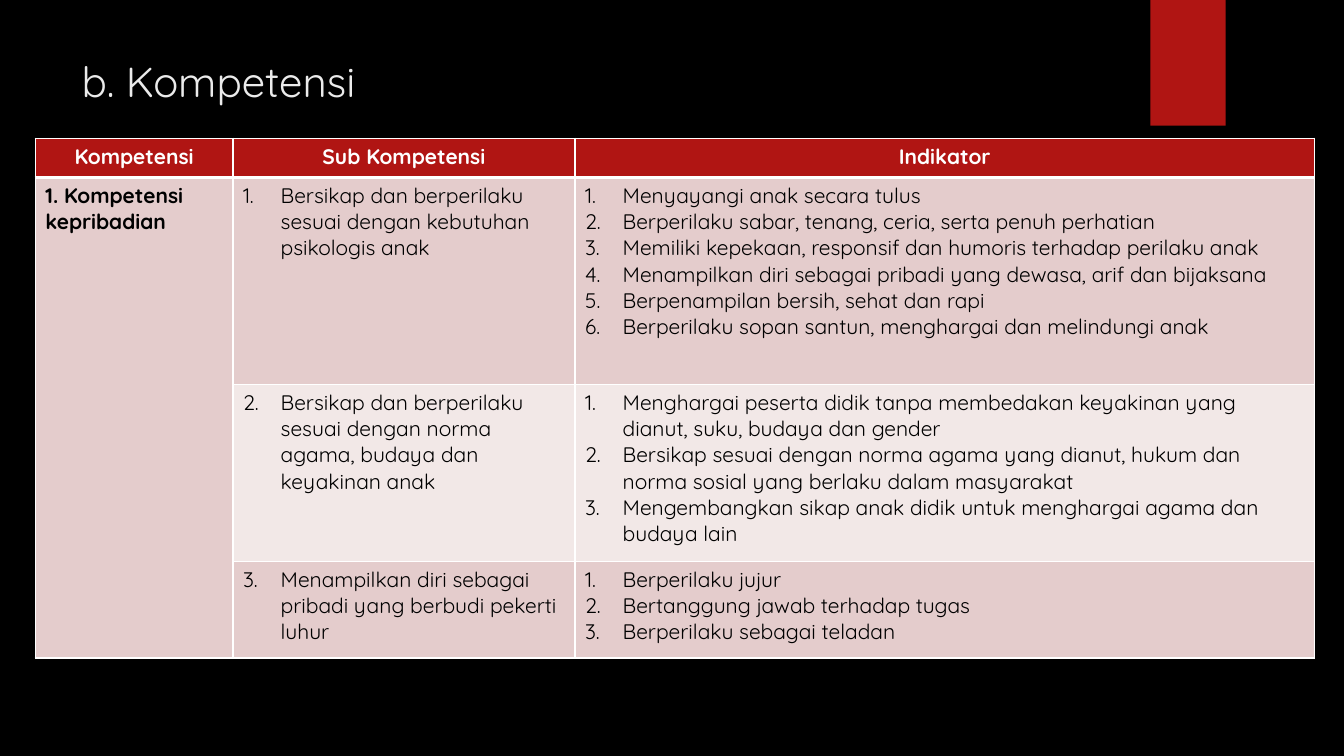
"""Build the slide that lists personality competences and their indicators."""
from dataclasses import dataclass

import lxml.etree
import pptx
import pptx.dml.color
import pptx.enum.shapes
import pptx.enum.text
import pptx.oxml.ns
import pptx.util
from pptx.util import Cm


@dataclass(frozen=True)
class Theme:
    """Colours, font and type sizes of the slide."""

    font: str = "Quicksand"
    title_size: int = 30
    table_size: int = 15
    background: str = "000000"
    title: str = "EBEBEB"
    accent: str = "B01513"
    header_text: str = "FFFFFF"
    body_text: str = "000000"
    border: str = "FFFFFF"
    band_dark: str = "E4CCCC"
    band_light: str = "F2E8E7"


THEME = Theme()
HEADERS = ["Kompetensi", "Sub Kompetensi", "Indikator"]
COMPETENCE = "1. Kompetensi kepribadian"
SUB_COMPETENCES = [
    ("Bersikap dan berperilaku sesuai dengan kebutuhan psikologis anak", [
        "Menyayangi anak secara tulus",
        "Berperilaku sabar, tenang, ceria, serta penuh perhatian",
        "Memiliki kepekaan, responsif dan humoris terhadap perilaku anak",
        "Menampilkan diri sebagai pribadi yang dewasa, arif dan bijaksana",
        "Berpenampilan bersih, sehat dan rapi",
        "Berperilaku sopan santun, menghargai dan melindungi anak",
    ]),
    ("Bersikap dan berperilaku sesuai dengan norma agama, budaya dan keyakinan anak", [
        "Menghargai peserta didik tanpa membedakan keyakinan yang dianut, "
        "suku, budaya dan gender",
        "Bersikap sesuai dengan norma agama yang dianut, hukum dan norma "
        "sosial yang berlaku dalam masyarakat",
        "Mengembangkan sikap anak didik untuk menghargai agama dan budaya lain",
    ]),
    ("Menampilkan diri sebagai pribadi yang berbudi pekerti luhur", [
        "Berperilaku jujur",
        "Bertanggung jawab terhadap tugas",
        "Berperilaku sebagai teladan",
    ]),
]
COLUMN_WIDTHS = [4.98, 8.62, 18.64]
ROW_HEIGHTS = [0.99, 5.22, 4.46, 2.43]


def rgb(colour):
    """Turn a hex string into a colour value."""
    return pptx.dml.color.RGBColor.from_string(colour)


def paint(fill, colour):
    """Give a fill one solid colour."""
    fill.solid()
    fill.fore_color.rgb = rgb(colour)


def add_element(parent, tag, **attributes):
    """Append a drawing element with the given attributes."""
    child = lxml.etree.SubElement(parent, pptx.oxml.ns.qn(tag))
    for name, value in attributes.items():
        child.set(name, str(value))
    return child


def number_paragraph(para, start):
    """Give a paragraph automatic numbering with a hanging indent."""
    properties = para._p.get_or_add_pPr()
    properties.set("marL", str(Cm(0.95)))
    properties.set("indent", str(-Cm(0.95)))
    add_element(properties, "a:buFont", typeface="+mj-lt")
    add_element(properties, "a:buAutoNum", type="arabicPeriod", startAt=start)


def write(frame, lines, *, size=THEME.table_size, colour=THEME.body_text,
          bold=False, align=pptx.enum.text.PP_ALIGN.LEFT, start=None):
    """Fill a text frame with formatted, optionally numbered, paragraphs."""
    for index, line in enumerate(lines):
        para = frame.add_paragraph() if index else frame.paragraphs[0]
        if start is not None:
            number_paragraph(para, start)
        para.alignment = align
        span = para.add_run()
        span.text = line
        span.font.name = THEME.font
        span.font.size = pptx.util.Pt(size)
        span.font.bold = bold
        span.font.color.rgb = rgb(colour)


def style_cell(cell, colour, bottom=1):
    """Set the borders and the fill of a table cell."""
    properties = cell._tc.get_or_add_tcPr()
    for side, width in (("L", 1), ("R", 1), ("T", 1), ("B", bottom)):
        line = add_element(properties, f"a:ln{side}", w=pptx.util.Pt(width))
        fill = add_element(line, "a:solidFill")
        add_element(fill, "a:srgbClr", val=THEME.border)
    paint(cell.fill, colour)


def add_title(page, text):
    """Place and format the title placeholder."""
    title = page.shapes.title
    title.left, title.top = Cm(1.8), Cm(1.27)
    title.width, title.height = Cm(26.14), Cm(3.89)
    frame = title.text_frame
    frame.auto_size = pptx.enum.text.MSO_AUTO_SIZE.NONE
    frame.vertical_anchor = pptx.enum.text.MSO_ANCHOR.TOP
    write(frame, [text], size=THEME.title_size, colour=THEME.title)


def add_ribbon(page):
    """Draw the red ribbon at the top edge."""
    ribbon = page.shapes.add_shape(
        pptx.enum.shapes.MSO_SHAPE.RECTANGLE, Cm(28.99), Cm(0), Cm(1.9), Cm(3.17))
    ribbon.shadow.inherit = False
    paint(ribbon.fill, THEME.accent)
    ribbon.line.fill.background()


def add_competence_table(page):
    """Build the table of competences, sub competences and indicators."""
    table = page.shapes.add_table(
        len(ROW_HEIGHTS), len(COLUMN_WIDTHS), Cm(0.89), Cm(3.48),
        Cm(sum(COLUMN_WIDTHS)), Cm(sum(ROW_HEIGHTS))).table
    table.first_row = table.horz_banding = False
    for column, width in zip(table.columns, COLUMN_WIDTHS):
        column.width = Cm(width)
    for row, height in zip(table.rows, ROW_HEIGHTS):
        row.height = Cm(height)

    for column, header in enumerate(HEADERS):
        cell = table.cell(0, column)
        style_cell(cell, THEME.accent, bottom=3)
        write(cell.text_frame, [header], colour=THEME.header_text, bold=True,
              align=pptx.enum.text.PP_ALIGN.CENTER)

    for number, (sub_competence, indicators) in enumerate(SUB_COMPETENCES, 1):
        band = THEME.band_dark if number % 2 else THEME.band_light
        for column, colour in enumerate((THEME.band_dark, band, band)):
            style_cell(table.cell(number, column), colour)
        write(table.cell(number, 1).text_frame, [sub_competence], start=number)
        write(table.cell(number, 2).text_frame, indicators, start=1)

    competence = table.cell(1, 0)
    competence.merge(table.cell(len(SUB_COMPETENCES), 0))
    write(competence.text_frame, [COMPETENCE], bold=True)


def main():
    """Create the deck and save it."""
    deck = pptx.Presentation()
    deck.slide_width, deck.slide_height = Cm(33.87), Cm(19.05)
    page = deck.slides.add_slide(deck.slide_layouts.get_by_name("Title Only"))
    paint(page.background.fill, THEME.background)
    add_ribbon(page)
    add_title(page, "b. Kompetensi")
    add_competence_table(page)
    deck.save("out.pptx")


if __name__ == "__main__":
    main()
